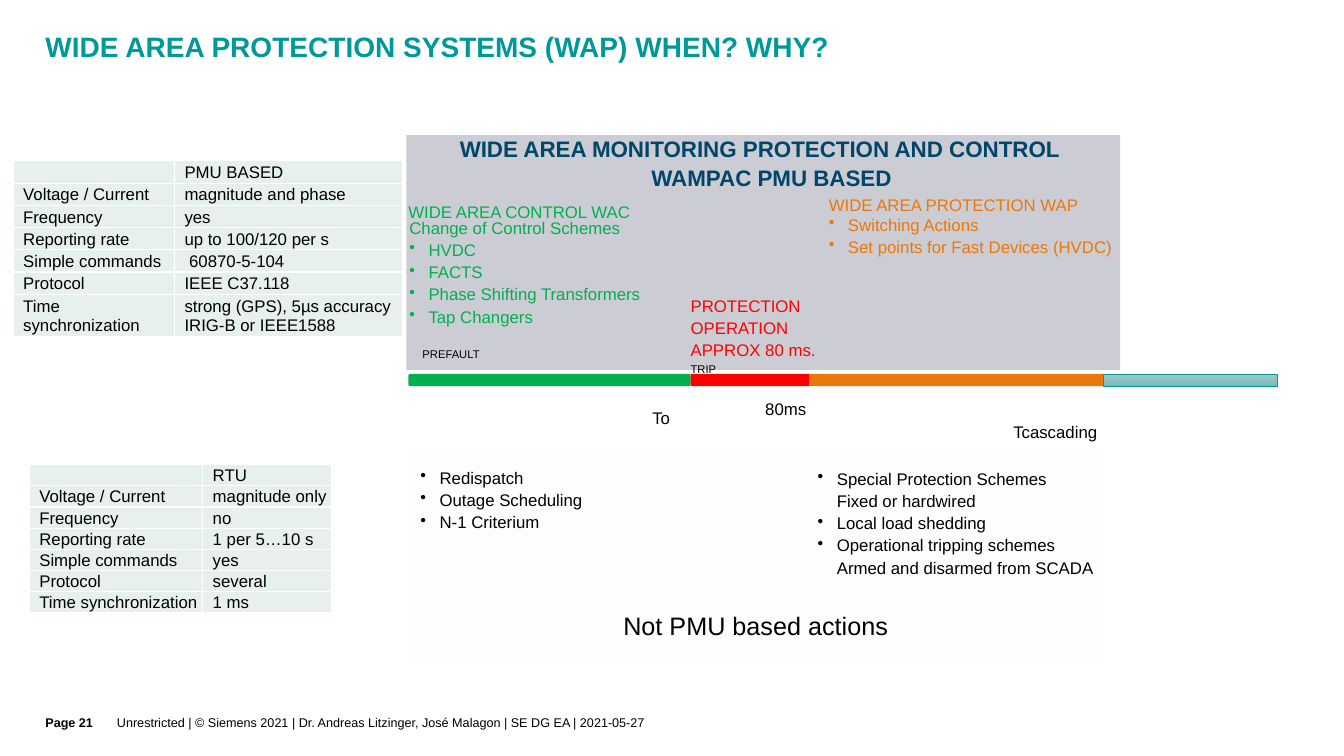
import pptx
import pptx.dml.color
import pptx.enum.shapes
import pptx.enum.text
import pptx.oxml.ns
import pptx.util
from lxml import etree

Inches = pptx.util.Inches
ANCHOR = pptx.enum.text.MSO_ANCHOR
ALIGN = pptx.enum.text.PP_ALIGN
SHAPE = pptx.enum.shapes.MSO_SHAPE
qn = pptx.oxml.ns.qn

COLORS = {
    "title": "009999", "heading": "004669", "black": "000000", "white": "FFFFFF",
    "wampac": "CCCCD4", "conventional": "FDFDFC", "cell": "E7EFEF",
    "control": "00B050", "trip": "FF0000", "protection": "EB780A",
    "tail_light": "9DCACA", "tail_dark": "7CB8B8",
}
BULLET = "• "
HANGING = 0.19


def rgb(name):
    return pptx.dml.color.RGBColor.from_string(COLORS[name])


def write_text(frame, lines, size=12, color="black", bold=False, spacing=1.1,
               align=ALIGN.LEFT, anchor=ANCHOR.TOP, insets=(0, 0, 0, 0), indents=None):
    """Fill a frame, one paragraph a line; indents maps a line number to its left margin."""
    frame.word_wrap = True
    frame.vertical_anchor = anchor
    (frame.margin_left, frame.margin_top,
     frame.margin_right, frame.margin_bottom) = [Inches(inset) for inset in insets]
    for number, line in enumerate(lines):
        paragraph = frame.paragraphs[0] if number == 0 else frame.add_paragraph()
        properties = paragraph._p.get_or_add_pPr()
        if line.startswith(BULLET):
            line = line[len(BULLET):]
            properties.set("marL", str(Inches(HANGING)))
            properties.set("indent", str(-Inches(HANGING)))
            etree.SubElement(properties, qn("a:buChar"), char=BULLET.strip())
        elif indents and number in indents:
            properties.set("marL", str(Inches(indents[number])))
        paragraph.alignment = align
        paragraph.line_spacing = spacing
        if not line:
            etree.SubElement(paragraph._p, qn("a:endParaRPr"), sz=str(size * 100))
            continue
        run = paragraph.add_run()
        run.text = line
        run.font.name = "Arial"
        run.font.size = pptx.util.Pt(size)
        run.font.bold = bold
        run.font.color.rgb = rgb(color)


def add_text(slide, left, top, width, height, lines, **text_format):
    box = slide.shapes.add_textbox(Inches(left), Inches(top), Inches(width), Inches(height))
    write_text(box.text_frame, lines, **text_format)


def add_block(slide, left, top, width, height, color, preset=SHAPE.RECTANGLE):
    block = slide.shapes.add_shape(
        preset, Inches(left), Inches(top), Inches(width), Inches(height))
    block.shadow.inherit = False
    block.fill.solid()
    block.fill.fore_color.rgb = rgb(color)
    block.line.fill.background()
    return block


def add_cell_borders(cell):
    properties = cell._tc.get_or_add_tcPr()
    for side in ("lnL", "lnR", "lnT", "lnB"):
        line = etree.SubElement(properties, qn(f"a:{side}"), w=str(pptx.util.Pt(1)))
        fill = etree.SubElement(line, qn("a:solidFill"))
        etree.SubElement(fill, qn("a:srgbClr"), val=COLORS["white"])


def add_comparison_table(slide, left, top, widths, heights, values):
    labels = ["", "Voltage / Current", "Frequency", "Reporting rate",
              "Simple commands", "Protocol", "Time synchronization"]
    frame = slide.shapes.add_table(
        len(labels), 2, Inches(left), Inches(top), Inches(sum(widths)), Inches(sum(heights)))
    table = frame.table
    table.first_row = table.horz_banding = False
    for column, width in zip(table.columns, widths):
        column.width = Inches(width)
    for row, height, texts in zip(table.rows, heights, zip(labels, values)):
        row.height = Inches(height)
        for cell, text in zip(row.cells, texts):
            add_cell_borders(cell)
            cell.fill.solid()
            cell.fill.fore_color.rgb = rgb("cell")
            write_text(cell.text_frame, text.split("\n"), spacing=1.0)
            cell.vertical_anchor = ANCHOR.MIDDLE
            cell.margin_left, cell.margin_right = Inches(0.1), Inches(0.01)
            cell.margin_top, cell.margin_bottom = Inches(0.01), 0


def add_wampac_panel(slide, left, top, width, height):
    add_block(slide, left, top, width, height, "wampac")
    add_text(slide, left + 0.53, top - 0.03, 6.18, 0.6,
             ["WIDE AREA MONITORING PROTECTION AND CONTROL", "WAMPAC PMU BASED"],
             size=16, color="heading", bold=True, indents={1: 1.9})
    # Control, trip and protection columns
    columns = [
        (0.02, 0.64, 2.44, 0.23, "control", ["WIDE AREA CONTROL WAC"]),
        (0.03, 0.8, 2.68, 1.2, "control",
         ["Change of Control Schemes", "• HVDC", "• FACTS",
          "• Phase Shifting Transformers", "• Tap Changers"]),
        (2.82, 1.57, 1.4, 0.66, "trip", ["PROTECTION", "OPERATION", "APPROX 80 ms."]),
        (4.19, 0.57, 2.7, 0.23, "protection", ["WIDE AREA PROTECTION WAP"]),
        (4.19, 0.77, 2.88, 0.5, "protection",
         ["• Switching Actions", "• Set points for Fast Devices (HVDC)"]),
    ]
    for x, y, column_width, column_height, color, lines in columns:
        add_text(slide, left + x, top + y, column_width, column_height, lines, color=color)


def add_timeline(slide, left, top, height):
    phases = [(2.8, "control", SHAPE.ROUNDED_RECTANGLE), (1.18, "trip", SHAPE.RECTANGLE),
              (2.91, "protection", SHAPE.RECTANGLE), (1.73, "tail_light", SHAPE.RECTANGLE)]
    x = left
    for width, color, preset in phases:
        phase = add_block(slide, x, top, width, height, color, preset)
        x += width
    # The last phase fades and has an outline
    phase.fill.gradient()
    phase.fill.gradient_angle = 270
    for stop, color in zip(phase.fill.gradient_stops, ("tail_light", "tail_dark")):
        stop.color.rgb = rgb(color)
    phase.line.color.rgb = rgb("title")
    phase.line.width = pptx.util.Pt(0.5)
    # Time marks, each centred on its height
    marks = [(0.14, -0.2, "PREFAULT", 8), (2.8, -0.06, "TRIP", 8), (2.42, 0.43, "To", 12),
             (3.54, 0.34, "80ms", 12), (6.0, 0.56, "Tcascading", 12)]
    for x, middle, text, size in marks:
        add_text(slide, left + x, top + middle - 0.1, 1, 0.2, [text],
                 size=size, anchor=ANCHOR.MIDDLE)


def add_conventional_panel(slide, left, top, width, height):
    panel = add_block(slide, left, top, width, height, "conventional")
    write_text(panel.text_frame, ["Not PMU based actions"], size=18, align=ALIGN.CENTER,
               anchor=ANCHOR.BOTTOM, insets=(0.12, 0.06, 0.12, 0.2))
    add_text(slide, left + 0.12, top + 0.14, 2.68, 0.7,
             ["• Redispatch", "• Outage Scheduling", "• N-1 Criterium"])
    add_text(slide, left + 4.06, top + 0.15, 2.79, 1.15,
             ["• Special Protection Schemes", "Fixed or hardwired", "• Local load shedding",
              "• Operational tripping schemes", "Armed and disarmed from SCADA"],
             indents={1: HANGING, 4: HANGING})


def add_footer(slide, left, top, height):
    footer_format = {"size": 9, "spacing": 1.0, "anchor": ANCHOR.MIDDLE,
                     "insets": (0, 0, 0, 0.07)}
    add_text(slide, left, top, 0.71, height, ["Page 21"], bold=True, **footer_format)
    add_text(slide, left + 0.71, top, 10.08, height,
             ["Unrestricted | © Siemens 2021 | Dr. Andreas Litzinger, José Malagon"
              " | SE DG EA | 2021-05-27"], **footer_format)


def main():
    presentation = pptx.Presentation()
    presentation.slide_width, presentation.slide_height = Inches(13.33), Inches(7.5)
    slide = presentation.slides.add_slide(presentation.slide_layouts[6])

    add_text(slide, 0.45, 0.32, 10.79, 0.32,
             ["WIDE AREA PROTECTION SYSTEMS (WAP) WHEN? WHY?"],
             size=20, color="title", bold=True, spacing=0.9, anchor=ANCHOR.MIDDLE)
    add_wampac_panel(slide, 4.03, 1.34, 7.08, 2.33)
    add_timeline(slide, 4.05, 3.71, 0.12)
    add_conventional_panel(slide, 4.05, 4.48, 6.89, 2.07)
    add_comparison_table(
        slide, 0.13, 1.59, (1.6, 2.26), [0.23] + [0.22] * 5 + [0.42],
        ["PMU BASED", "magnitude and phase", "yes", "up to 100/120 per s", " 60870-5-104",
         "IEEE C37.118", "strong (GPS), 5µs accuracy\nIRIG-B or IEEE1588"])
    add_comparison_table(
        slide, 0.29, 4.61, (1.72, 1.28), [0.21] * 7,
        ["RTU", "magnitude only", "no", "1 per 5…10 s", "yes", "several", "1 ms"])
    add_footer(slide, 0.45, 6.9, 0.6)
    presentation.save("out.pptx")


if __name__ == "__main__":
    main()
